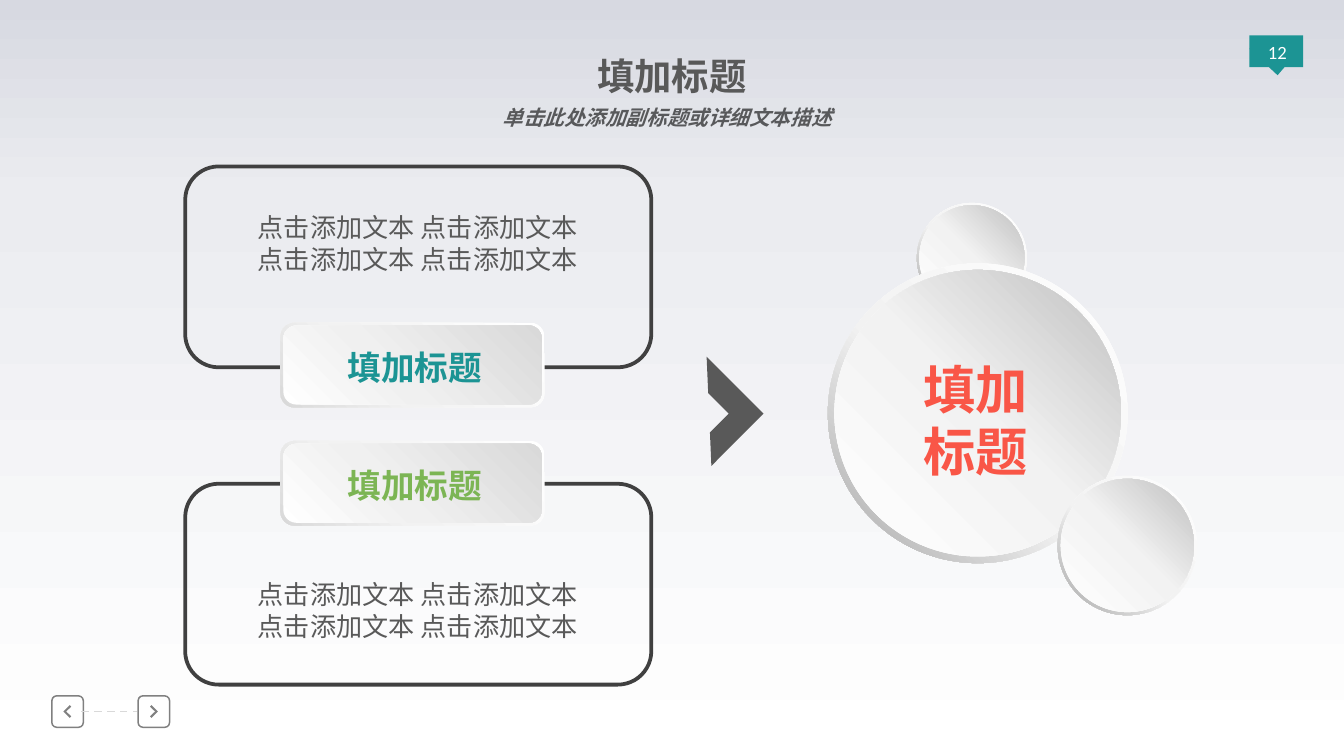
from dataclasses import dataclass
from typing import NamedTuple

from lxml.etree import SubElement
from pptx import Presentation
from pptx.dml.color import RGBColor
from pptx.enum.dml import MSO_LINE
from pptx.enum.shapes import MSO_CONNECTOR, MSO_SHAPE
from pptx.enum.text import MSO_ANCHOR, PP_ALIGN
from pptx.oxml.ns import qn
from pptx.util import Pt


@dataclass(frozen=True)
class Theme:
    teal: str = "1C9494"
    green: str = "7CB554"
    coral: str = "F95647"
    white: str = "FFFFFF"
    text: str = "595959"
    subtitle: str = "58595B"
    outline: str = "404040"
    navigation: str = "808080"
    dash: str = "D9D9D9"
    background: tuple = ((0, "D7D9E1"), (26, "EBECF0"), (100, "FFFFFF"))
    ring: tuple = ((0, "FFFFFF"), (55, "F2F2F2"), (100, "A6A6A6"))
    disc: tuple = ((0, "FFFFFF"), (51, "F2F2F2"), (100, "BFBFBF"))
    plate_rim: tuple = ((0, "FFFFFF"), (62, "F2F2F2"), (100, "D9D9D9"))
    plate_face: tuple = ((0, "FFFFFF"), (42, "F0F0F0"), (100, "D9D9D9"))
    font: str = "Noto Sans CJK SC"
    number_font: str = "Calibri"
    number_size: float = 10
    subtitle_size: float = 11
    body_size: float = 14
    label_size: float = 18
    title_size: float = 20
    bubble_size: float = 28
    line_height: float = 1.19


class Box(NamedTuple):
    left: float
    top: float
    width: float
    height: float

    def inset(self, margin: float) -> "Box":
        return Box(self.left + margin, self.top + margin,
                   self.width - 2 * margin, self.height - 2 * margin)


class Panel(NamedTuple):
    frame_top: float
    body_top: float
    plate_top: float
    label_color: str


class Bubble(NamedTuple):
    left: float
    top: float
    diameter: float


THEME = Theme()
PANELS = (
    Panel(259.2, 306.7, 236.2, THEME.green),
    Panel(89.2, 110.1, 172.9, THEME.teal),
)
BACK_BUBBLE = Bubble(491.2, 108.7, 59)
FRONT_BUBBLES = (Bubble(443.5, 141.1, 160.6), Bubble(566.6, 254.9, 74.7))
BUTTON_SIZE = 17.6
BUTTON_TOP = 372.4
PREVIOUS_LEFT, NEXT_LEFT = 27.4, 73.6


def set_gradient(fill, owner, stops, angle: int) -> None:
    """Fill with any number of stops; the angle runs clockwise."""
    fill.gradient()
    gradient = next(owner.element.iter(qn("a:gradFill")))
    stop_list = gradient.find(qn("a:gsLst"))
    for stop in list(stop_list):
        stop_list.remove(stop)
    for position, color in stops:
        stop = SubElement(stop_list, qn("a:gs"), pos=str(position * 1000))
        SubElement(stop, qn("a:srgbClr"), val=color)
    gradient.find(qn("a:lin")).set("ang", str(angle * 60000))


def style_shape(shape, fill=None, angle=None, line=None, line_width=1.0) -> None:
    shape.shadow.inherit = False
    if fill is None:
        shape.fill.background()
    elif angle is not None:
        set_gradient(shape.fill, shape, fill, angle)
    else:
        shape.fill.solid()
        shape.fill.fore_color.rgb = RGBColor.from_string(fill)
    if line:
        shape.line.color.rgb = RGBColor.from_string(line)
        shape.line.width = Pt(line_width)
    else:
        shape.line.fill.background()


def add_shape(slide, kind, box: Box, rotation=0.0, adjustment=None, **style):
    shape = slide.shapes.add_shape(kind, *map(Pt, box))
    shape.rotation = rotation
    if adjustment is not None:
        shape.adjustments[0] = adjustment
    style_shape(shape, **style)
    return shape


def add_text(slide, text: str, box: Box, *, size: float, color: str, font=THEME.font,
             bold=False, italic=False, insets=(0, 0, 0, 0), wrap=True,
             anchor=MSO_ANCHOR.TOP, line_height=THEME.line_height) -> None:
    frame = slide.shapes.add_textbox(*map(Pt, box)).text_frame
    frame.word_wrap = wrap
    frame.vertical_anchor = anchor
    (frame.margin_left, frame.margin_top,
     frame.margin_right, frame.margin_bottom) = map(Pt, insets)
    frame.text = text
    for paragraph in frame.paragraphs:
        paragraph.alignment = PP_ALIGN.CENTER
        if line_height:
            paragraph.line_spacing = Pt(round(size * line_height, 1))
        for run in paragraph.runs:
            run.font.size = Pt(size)
            run.font.bold = bold
            run.font.italic = italic
            run.font.color.rgb = RGBColor.from_string(color)
            run.font.name = font
            SubElement(run.font._element, qn("a:ea"), typeface=font)


def add_page_badge(slide) -> None:
    add_shape(slide, MSO_SHAPE.RECTANGLE, Box(669.4, 19, 28.8, 17), fill=THEME.teal)
    add_shape(slide, MSO_SHAPE.ISOSCELES_TRIANGLE, Box(669.6, 25.2, 28.8, 15.1),
              rotation=176.8, fill=THEME.teal)
    add_text(slide, "12", Box(671, 15.8, 26.6, 27.4), size=THEME.number_size,
             color=THEME.white, font=THEME.number_font, insets=(0, 0, 0, 3.6),
             anchor=MSO_ANCHOR.MIDDLE, line_height=None)


def add_navigation_button(slide, left: float, direction: int) -> None:
    """Direction is -1 for back and 1 for forward."""
    box = Box(left, BUTTON_TOP, BUTTON_SIZE, BUTTON_SIZE)
    add_shape(slide, MSO_SHAPE.ROUNDED_RECTANGLE, box.inset(0.4), adjustment=0.15,
              line=THEME.navigation, line_width=0.8)
    center_x, center_y = left + BUTTON_SIZE / 2, BUTTON_TOP + BUTTON_SIZE / 2
    offsets = ((-1.2, -3.4), (2.2, 0), (-1.2, 3.4), (-2, 2.6), (0.7, 0), (-2, -2.6))
    points = [(Pt(center_x + direction * x), Pt(center_y + y)) for x, y in offsets]
    builder = slide.shapes.build_freeform(*points[0])
    builder.add_line_segments(points[1:], close=True)
    style_shape(builder.convert_to_shape(), fill=THEME.navigation)


def add_navigation(slide) -> None:
    add_navigation_button(slide, PREVIOUS_LEFT, -1)
    add_navigation_button(slide, NEXT_LEFT, 1)
    middle = Pt(BUTTON_TOP + BUTTON_SIZE / 2)
    connector = slide.shapes.add_connector(
        MSO_CONNECTOR.STRAIGHT, Pt(43.5), middle, Pt(NEXT_LEFT), middle)
    connector.line.color.rgb = RGBColor.from_string(THEME.dash)
    connector.line.width = Pt(1)
    connector.line.dash_style = MSO_LINE.DASH
    SubElement(connector.element.spPr, qn("a:effectLst"))


def add_panel_frame(slide, panel: Panel) -> None:
    add_shape(slide, MSO_SHAPE.ROUNDED_RECTANGLE, Box(99.2, panel.frame_top, 249.7, 107.6),
              line=THEME.outline, line_width=2)
    add_text(slide, "点击添加文本 点击添加文本\n点击添加文本 点击添加文本",
             Box(108, panel.body_top, 231.8, 41), size=THEME.body_size,
             color=THEME.text, insets=(7.2, 3.6, 7.2, 3.6))


def add_panel_label(slide, panel: Panel) -> None:
    plate = Box(150.3, panel.plate_top, 141.5, 45.4)
    add_shape(slide, MSO_SHAPE.ROUNDED_RECTANGLE, plate, fill=THEME.plate_rim, angle=135)
    add_shape(slide, MSO_SHAPE.ROUNDED_RECTANGLE, plate.inset(1.5),
              fill=THEME.plate_face, angle=315)
    add_text(slide, "填加标题", Box(181.2, panel.plate_top + 13.3, 82, 21.6),
             size=THEME.label_size, color=panel.label_color, bold=True)


def add_bubble(slide, bubble: Bubble) -> None:
    box = Box(bubble.left, bubble.top, bubble.diameter, bubble.diameter)
    add_shape(slide, MSO_SHAPE.DONUT, box, adjustment=0.049, fill=THEME.ring, angle=135)
    add_shape(slide, MSO_SHAPE.OVAL, box.inset(bubble.diameter * 0.022),
              fill=THEME.disc, angle=315)


def main() -> None:
    presentation = Presentation()
    presentation.slide_width, presentation.slide_height = Pt(720), Pt(405)
    slide = presentation.slides.add_slide(presentation.slide_layouts[6])
    set_gradient(slide.background.fill, slide, THEME.background, 90)

    add_page_badge(slide)
    add_navigation(slide)
    add_bubble(slide, BACK_BUBBLE)
    add_text(slide, "填加标题", Box(280.8, 28.6, 158.4, 24.5), size=THEME.title_size,
             color=THEME.text, bold=True)
    add_text(slide, "单击此处添加副标题或详细文本描述", Box(261.4, 53, 192.2, 20.9),
             size=THEME.subtitle_size, color=THEME.subtitle, bold=True, italic=True,
             insets=(7.2, 3.6, 7.2, 3.6), wrap=False)
    for panel in PANELS:
        add_panel_frame(slide, panel)
    add_shape(slide, MSO_SHAPE.HALF_FRAME, Box(360, 198.7, 39.6, 43.2), rotation=135,
              fill=THEME.text)
    for panel in PANELS:
        add_panel_label(slide, panel)
    for bubble in FRONT_BUBBLES:
        add_bubble(slide, bubble)
    add_text(slide, "填加\n标题", Box(481.7, 191.5, 82, 67.7), size=THEME.bubble_size,
             color=THEME.coral, bold=True)
    presentation.save("out.pptx")


if __name__ == "__main__":
    main()
